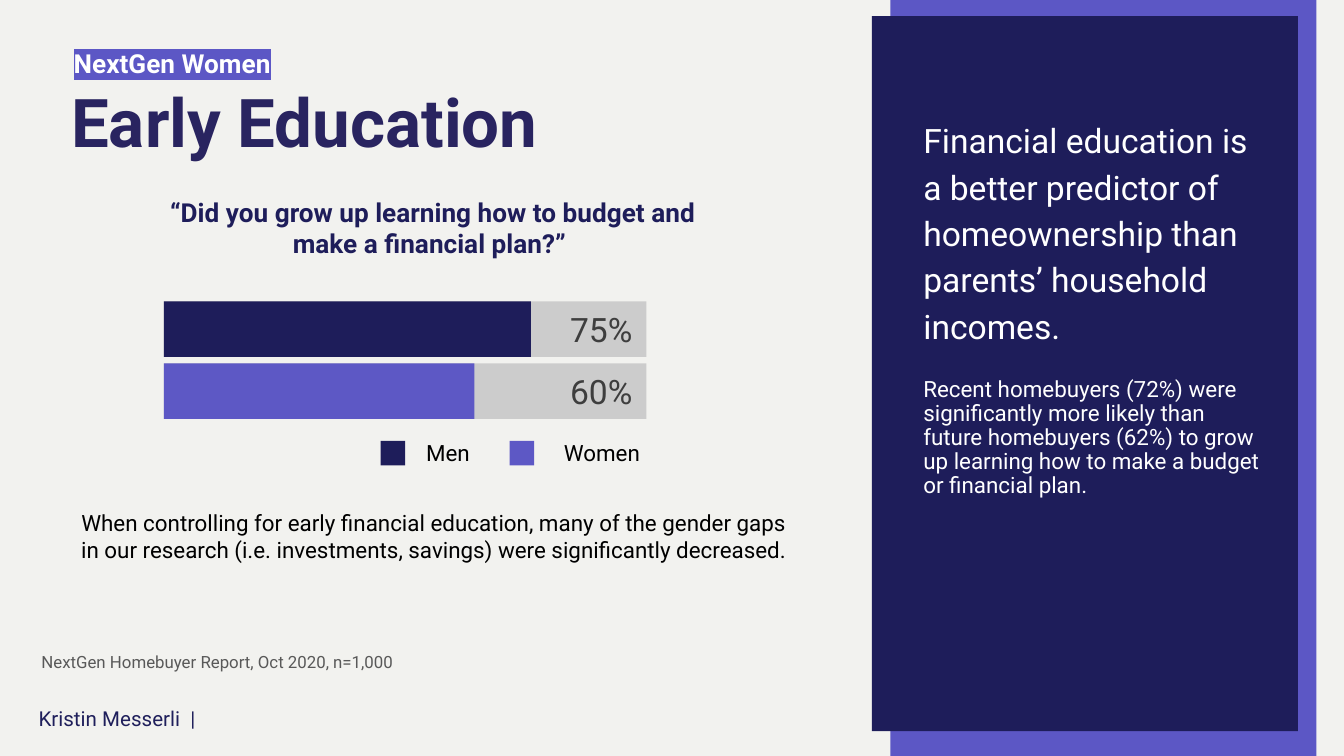
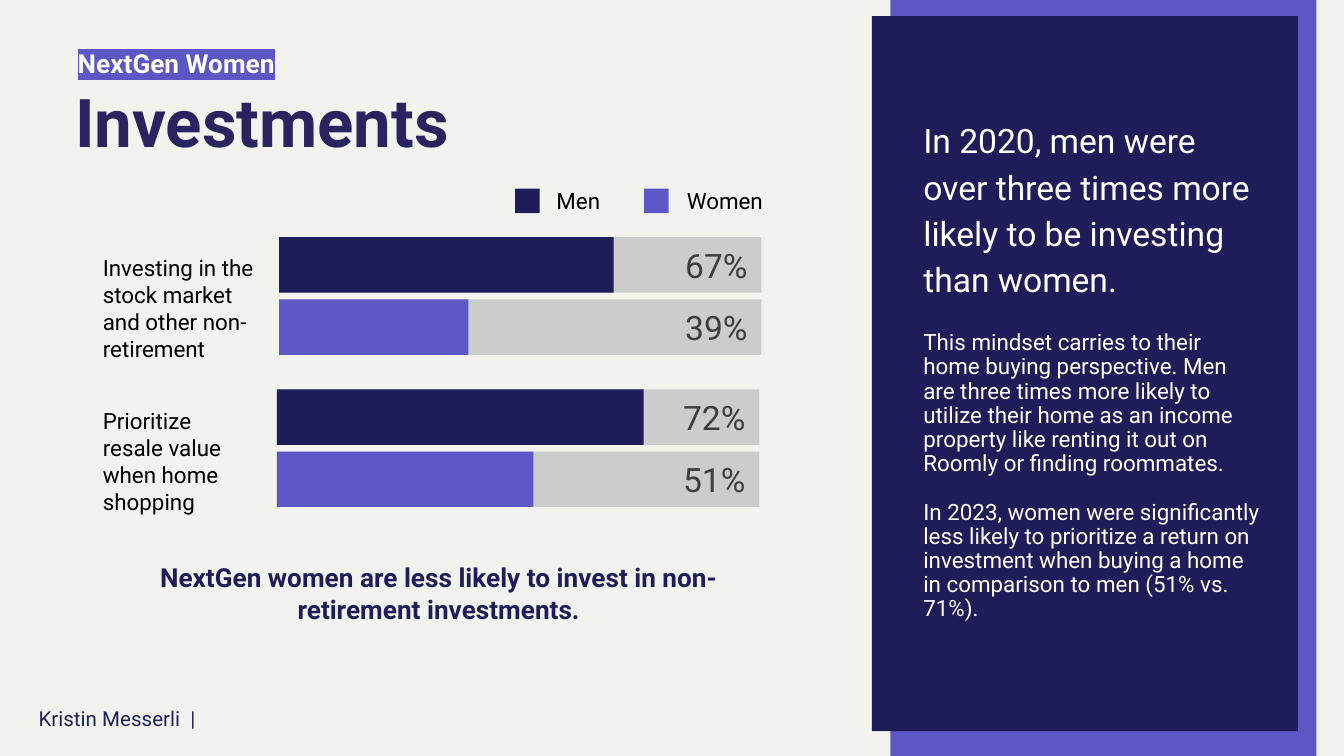
from lxml.etree import SubElement
from pptx import Presentation
from pptx.dml.color import RGBColor
from pptx.enum.shapes import MSO_SHAPE as Preset
from pptx.enum.text import MSO_ANCHOR as Anchor, MSO_AUTO_SIZE as AutoSize, PP_ALIGN as Align
from pptx.oxml.ns import qn
from pptx.util import Inches, Pt

FONT = "Roboto"
COLORS = {
    "paper": "F2F2EF", "navy": "1E1D5A", "violet": "5C57C5", "women": "5D58C5",
    "track": "CCCCCC", "value": "3E3E3E", "title": "292460", "footer": "1F1F5B",
    "source": "595959", "white": "FFFFFF", "black": "000000",
}
UNIT = Inches(0.1)
COLUMNS, ROWS = 100, 56.25
BAR_LENGTH, BAR_HEIGHT, BAR_PITCH = 35.9, 4.13, 4.62
SWATCH, SWATCH_PITCH = 1.83, 9.6
SERIES = (("Men", "navy"), ("Women", "women"))


def grid(*cells):
    """Convert grid columns and rows to slide lengths."""
    return [int(cell * UNIT) for cell in cells]


def color(name):
    """Look up a palette colour."""
    return RGBColor.from_string(COLORS[name])


def add_block(slide, cells, fill):
    """Draw a plain filled rectangle."""
    shape = slide.shapes.add_shape(Preset.RECTANGLE, *grid(*cells))
    shape.shadow.inherit = False
    shape.fill.solid()
    shape.fill.fore_color.rgb = color(fill)
    shape.line.fill.background()


def format_frame(shape, inset=1):
    """Set wrapping, anchor and equal insets on a text frame."""
    frame = shape.text_frame
    frame.word_wrap = True
    frame.auto_size = AutoSize.SHAPE_TO_FIT_TEXT
    frame.vertical_anchor = Anchor.TOP
    margin = int(inset * UNIT)
    frame.margin_left = frame.margin_right = margin
    frame.margin_top = frame.margin_bottom = margin


def format_paragraph(paragraph, size, ink, bold=False, align=Align.LEFT, spacing=1.0, before=0):
    """Set the spacing of a paragraph and the font of its runs."""
    paragraph.alignment = align
    paragraph.line_spacing = spacing
    paragraph.space_before = Pt(before)
    for run in paragraph.runs:
        run.font.name = FONT
        run.font.size = Pt(size)
        run.font.bold = bold
        run.font.color.rgb = color(ink)


def add_text(slide, cells, text, size, ink, inset=1, **style):
    """Add a one-paragraph text box and return its paragraph."""
    box = slide.shapes.add_textbox(*grid(*cells))
    box.text_frame.text = text
    format_frame(box, inset)
    paragraph = box.text_frame.paragraphs[0]
    format_paragraph(paragraph, size, ink, **style)
    return paragraph


def place(shape, cells):
    """Move a placeholder to grid cells."""
    shape.left, shape.top, shape.width, shape.height = grid(*cells)


def highlight(run, name):
    """Give a run a highlight colour behind its letters."""
    properties = run.font._element
    marker = SubElement(properties, qn("a:highlight"))
    SubElement(marker, qn("a:srgbClr")).set("val", COLORS[name])
    properties.find(qn("a:solidFill")).addnext(marker)


def add_heading(slide, left, text):
    """Fill the title placeholder and set the section tag above it."""
    title = slide.shapes.title
    place(title, (left, 5.65, 72.2, 7.5))
    title.text_frame.text = text
    format_frame(title)
    format_paragraph(title.text_frame.paragraphs[0], 36, "title", bold=True, spacing=0.9)
    tag = add_text(slide, (left + 0.2, 2.78, 32.8, 4.1), "NextGen Women", 14, "white",
                   bold=True, spacing=0.9)
    highlight(tag.runs[0], "violet")


def add_panel(slide, height, lead, *details):
    """Draw the side panel and put the body placeholder on it."""
    add_block(slide, (66.25, 0, 31.7, ROWS), "violet")
    add_block(slide, (64.87, 1.2, 31.7, 53.2), "navy")
    body = slide.placeholders[1]
    slide.shapes._spTree.append(body._element)
    place(body, (67.7, 7.5, 27.3, height))
    body.text_frame.text = "\n".join((lead, *details))
    format_frame(body)
    for index, paragraph in enumerate(body.text_frame.paragraphs):
        properties = paragraph._p.get_or_add_pPr()
        properties.set("marL", "0")
        properties.set("indent", "0")
        SubElement(properties, qn("a:buNone"))
        if index == 0:
            format_paragraph(paragraph, 18, "white", spacing=1.15)
        else:
            format_paragraph(paragraph, 12, "white", spacing=0.9,
                             before=17 if index == 1 else 13)


def add_bars(slide, left, top, bars):
    """Draw one bar per series as (label, length) over a grey track."""
    for index, ((label, length), (_, fill)) in enumerate(zip(bars, SERIES)):
        row = top + index * BAR_PITCH
        add_block(slide, (left, row, BAR_LENGTH, BAR_HEIGHT), "track")
        add_block(slide, (left, row, length, BAR_HEIGHT), fill)
        add_text(slide, (left + BAR_LENGTH - 10.35, row - 0.45, 10.3, 5), label, 18, "value",
                 align=Align.RIGHT)


def add_legend(slide, left, top, gaps):
    """Draw a swatch and a name for each series."""
    for index, ((name, fill), gap) in enumerate(zip(SERIES, gaps)):
        column = left + index * SWATCH_PITCH
        add_block(slide, (column, top, SWATCH, SWATCH), fill)
        width = 6 if name == "Men" else 11.4
        add_text(slide, (column + gap, top - 1.1, width, 4), name, 12, "black")


def add_statement(slide, left, top, text):
    """Add a bold centred statement."""
    add_text(slide, (left, top, 44.4, 5.5), text, 14, "navy", inset=0.4, bold=True,
             align=Align.CENTER)


def add_footer(slide):
    """Add the presenter's name at the bottom."""
    add_text(slide, (2.47, 52.1, 15.4, 2.6), "Kristin Messerli  |", 11, "footer", inset=0.4)


def build_education(slide):
    """Build the slide on early financial education."""
    add_heading(slide, 4.3, "Early Education")
    add_statement(slide, 10, 14.2,
                  "“Did you grow up learning how to budget and make a financial plan?” ")
    add_bars(slide, 12.2, 22.42, (("75%", 27.3), ("60%", 23.1)))
    add_legend(slide, 28.32, 32.8, (2.4, 3.05))
    add_text(slide, (4.5, 36.9, 55.6, 6.1),
             "When controlling for early financial education, many of the gender gaps in our "
             "research (i.e. investments, savings) were significantly decreased.",
             12, "black", align=Align.CENTER)
    add_text(slide, (2.1, 47.75, 41.6, 3.5), "NextGen Homebuyer Report, Oct 2020, n=1,000",
             9, "source")
    add_panel(slide, 32.7,
              "Financial education is a better predictor of homeownership than parents’ "
              "household incomes.",
              "Recent homebuyers (72%) were significantly more likely than future homebuyers "
              "(62%) to grow up learning how to make a budget or financial plan.")
    add_footer(slide)


def build_investments(slide):
    """Build the slide on investment habits."""
    add_heading(slide, 4.6, "Investments")
    add_legend(slide, 38.32, 14.04, (2.1, 2.2))
    add_bars(slide, 20.76, 17.65, (("67%", 24.9), ("39%", 14.1)))
    add_bars(slide, 20.6, 28.98, (("72%", 27.3), ("51%", 19.1)))
    add_text(slide, (6.67, 17.92, 13.4, 10.1),
             "Investing in the stock market and other non-retirement", 12, "black")
    add_text(slide, (6.67, 29.3, 13.4, 8.1),
             "Prioritize resale value when home shopping", 12, "black")
    add_statement(slide, 10.45, 41.4,
                  "NextGen women are less likely to invest in non-retirement investments.")
    add_panel(slide, 42.2,
              "In 2020, men were over three times more likely to be investing than women.",
              "This mindset carries to their home buying perspective. Men are three times more "
              "likely to utilize their home as an income property like renting it out on "
              "Roomly or finding roommates.",
              "In 2023, women were significantly less likely to prioritize a return on "
              "investment when buying a home in comparison to men (51% vs. 71%).")
    add_footer(slide)


def main():
    """Build and save the presentation."""
    presentation = Presentation()
    presentation.slide_width, presentation.slide_height = grid(COLUMNS, ROWS)
    background = presentation.slide_master.background.fill
    background.solid()
    background.fore_color.rgb = color("paper")
    for build in (build_education, build_investments):
        build(presentation.slides.add_slide(presentation.slide_layouts[1]))
    presentation.save("out.pptx")


if __name__ == "__main__":
    main()
